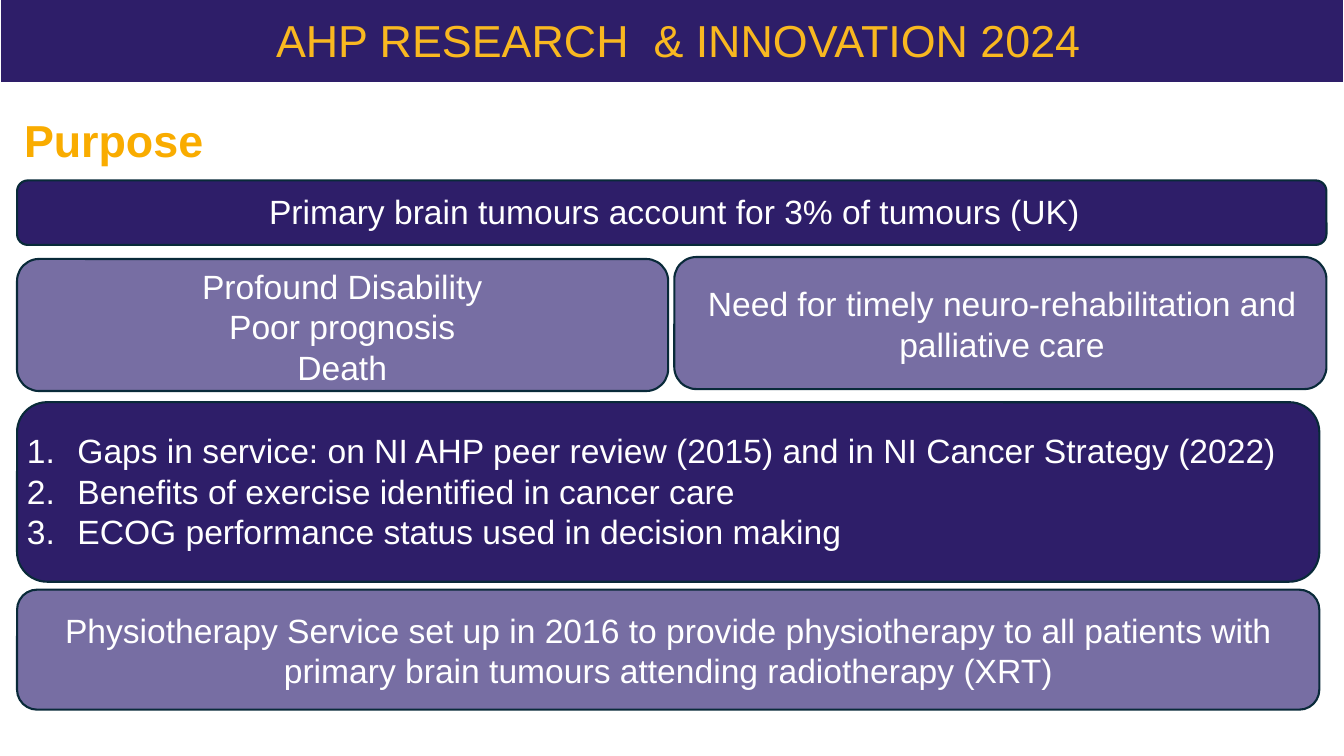
"""Builds the Purpose slide of the AHP research and innovation deck."""
from dataclasses import dataclass

from lxml.etree import SubElement
from pptx import Presentation
from pptx.dml.color import RGBColor
from pptx.enum.shapes import MSO_SHAPE
from pptx.enum.text import MSO_ANCHOR, PP_ALIGN
from pptx.oxml.ns import qn
from pptx.util import Pt


@dataclass(frozen=True)
class Theme:
    """Colours, type sizes and line width of the slide."""
    font: str = "Arial"
    indigo: str = "2E1E69"
    lilac: str = "776EA3"
    outline: str = "092A39"
    white: str = "FFFFFF"
    amber: str = "F9AC00"
    gold: str = "F9B820"
    body_size: float = 24
    heading_size: float = 32
    line_width: float = 1.5


class SlideBuilder:
    """Holds the theme and the current slide and draws its elements."""

    def __init__(self, slide, theme):
        """Keep the slide and its theme."""
        self.slide = slide
        self.theme = theme

    def panel(self, box, fill, line, kind=MSO_SHAPE.ROUNDED_RECTANGLE):
        """Draw a filled and outlined shape."""
        shape = self.slide.shapes.add_shape(kind, *map(Pt, box))
        shape.shadow.inherit = False
        shape.fill.solid()
        shape.fill.fore_color.rgb = RGBColor.from_string(fill)
        shape.line.color.rgb = RGBColor.from_string(line)
        shape.line.width = Pt(self.theme.line_width)

    def text(self, box, lines, color=None, size=None, bold=False,
             align=PP_ALIGN.CENTER, numbered=False):
        """Write one paragraph per line, numbered if asked."""
        frame = self.slide.shapes.add_textbox(*map(Pt, box)).text_frame
        frame_format = {"word_wrap": True, "vertical_anchor": MSO_ANCHOR.TOP}
        for name, value in frame_format.items():
            setattr(frame, name, value)
        font_format = {"name": self.theme.font, "bold": bold,
                       "size": Pt(size or self.theme.body_size)}
        for index, line in enumerate(lines):
            paragraph = frame.add_paragraph() if index else frame.paragraphs[0]
            paragraph.alignment = align
            if numbered:
                self.number(paragraph)
            run = paragraph.add_run()
            run.text = line
            for name, value in font_format.items():
                setattr(run.font, name, value)
            run.font.color.rgb = RGBColor.from_string(color or self.theme.white)

    def number(self, paragraph, indent=36):
        """Give a paragraph a hanging automatic number."""
        properties = paragraph._p.get_or_add_pPr()
        properties.set("marL", str(Pt(indent)))
        properties.set("indent", str(-Pt(indent)))
        SubElement(properties, qn("a:buFont"), typeface=self.theme.font)
        SubElement(properties, qn("a:buAutoNum"), type="arabicPeriod")


def main():
    """Build the slide and save it."""
    presentation = Presentation()
    presentation.slide_width = Pt(960)
    presentation.slide_height = Pt(540)
    slide = presentation.slides.add_slide(presentation.slide_layouts[6])
    theme = Theme()
    builder = SlideBuilder(slide, theme)

    left = 12.2
    panels = [
        ((left, 128.9, 935.3, 46.1), theme.indigo),
        ((left, 185, 465.1, 94.3), theme.lilac),
        ((481.7, 183.6, 465.8, 94.3), theme.lilac),
        ((left, 287.3, 930.2, 128.2), theme.indigo),
        ((left, 421.2, 930.2, 85.7), theme.lilac),
    ]
    for box, fill in panels:
        builder.panel(box, fill, theme.outline)

    builder.text((10.1, 77, 628.6, 46.1), ["Purpose"], theme.amber,
                 theme.heading_size, bold=True, align=PP_ALIGN.LEFT)
    statements = [
        ((15.8, 132.5, 931.7, 36),
         ["Primary brain tumours account for 3% of tumours (UK)"]),
        ((23, 186.5, 442.8, 94.3),
         ["Profound Disability", "Poor prognosis", "Death"]),
        ((488.2, 198.7, 455, 65.5),
         ["Need for timely neuro-rehabilitation and palliative care"]),
        ((18, 432, 918.7, 65.5),
         ["Physiotherapy Service set up in 2016 to provide physiotherapy to all "
          "patients with primary brain tumours attending radiotherapy (XRT)"]),
    ]
    for box, lines in statements:
        builder.text(box, lines)
    builder.text((left, 303.8, 935.3, 94.3), [
        "Gaps in service: on NI AHP peer review (2015) and in NI Cancer Strategy (2022)",
        "Benefits of exercise identified in cancer care",
        "ECOG performance status used in decision making",
    ], align=PP_ALIGN.LEFT, numbered=True)

    builder.panel((0, -1.4, 960, 60.5), theme.indigo, theme.white,
                  MSO_SHAPE.RECTANGLE)
    builder.text((190.1, 5.8, 595.4, 46.1), ["AHP RESEARCH  & INNOVATION 2024"],
                 theme.gold, theme.heading_size, align=PP_ALIGN.LEFT)
    presentation.save("out.pptx")


if __name__ == "__main__":
    main()
